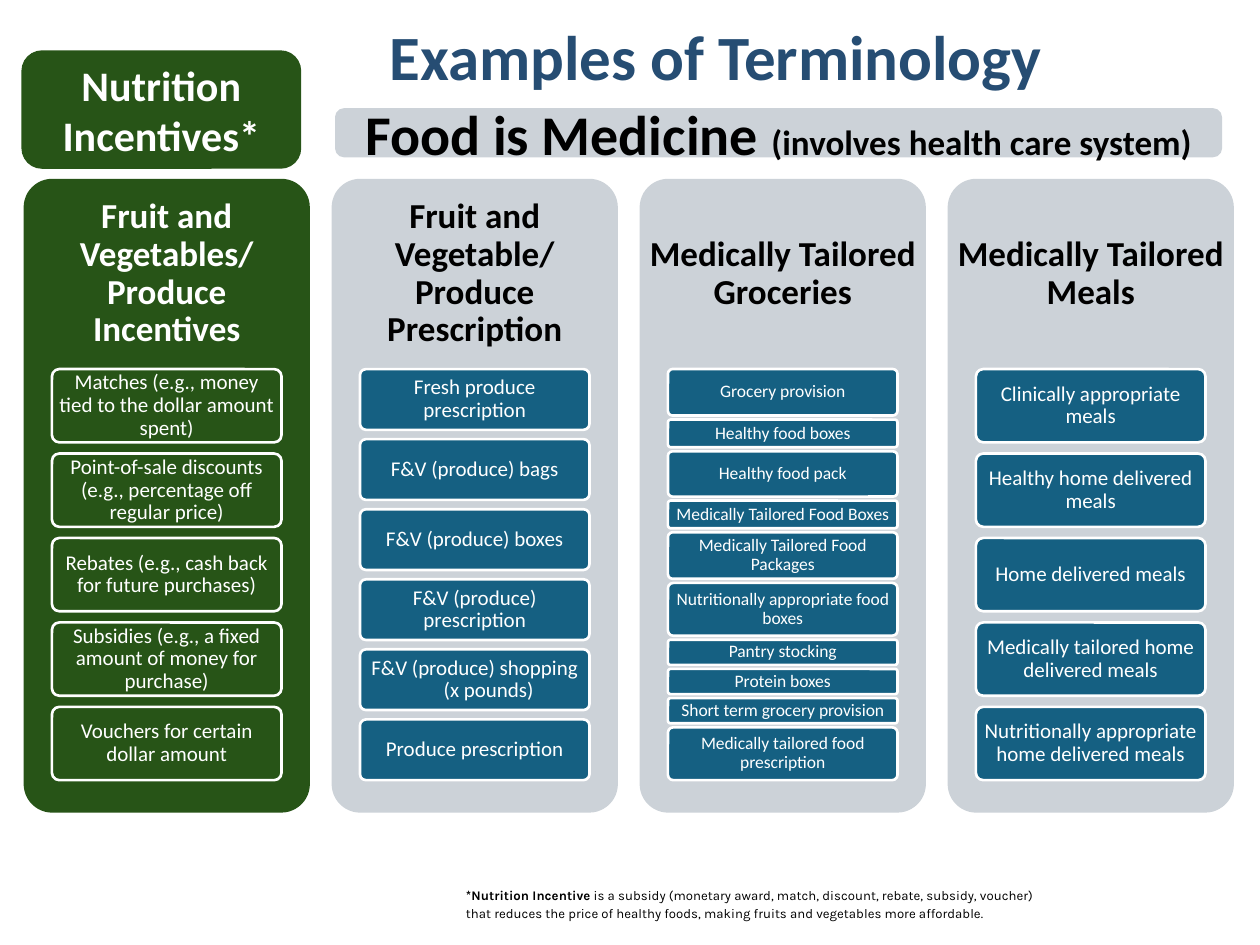
from pptx import Presentation
from pptx.dml.color import RGBColor
from pptx.enum.shapes import MSO_SHAPE as Shape
from pptx.enum.text import MSO_ANCHOR as Anchor, MSO_AUTO_SIZE as Fit, PP_ALIGN as Align
from pptx.util import Pt

NAVY = RGBColor(0x26, 0x4D, 0x73)
GREEN = RGBColor(0x27, 0x54, 0x17)
GRAY = RGBColor(0xCC, 0xD2, 0xD8)
TEAL = RGBColor(0x15, 0x60, 0x82)
WHITE = RGBColor(0xFF, 0xFF, 0xFF)
BLACK = RGBColor(0, 0, 0)

TITLE = "Examples of Terminology"
BADGE = ["Nutrition", "Incentives*"]
BANNER = [("Food is Medicine ", 32), ("(involves health care system)", 20)]
NOTE = [
    ("*Nutrition Incentive", True),
    (" is a subsidy (monetary award, match, discount, rebate, subsidy, voucher) "
     "that reduces the price of healthy foods, making fruits and vegetables "
     "more affordable.", False),
]
COLUMNS = [
    dict(head="Fruit and Vegetables/ Produce Incentives", panel=GREEN, ink=WHITE,
         card=GREEN, size=12, gap=6.4, items=[
             ("Matches (e.g., money tied to the dollar amount spent)", 1),
             ("Point-of-sale discounts (e.g., percentage off regular price)", 1),
             ("Rebates (e.g., cash back for future purchases)", 1),
             ("Subsidies (e.g., a fixed amount of money for purchase)", 1),
             ("Vouchers for certain dollar amount", 1)]),
    dict(head="Fruit and Vegetable/ Produce Prescription", panel=GRAY, ink=BLACK,
         card=TEAL, size=12, gap=5.3, items=[
             ("Fresh produce prescription", 1),
             ("F&V (produce) bags", 1),
             ("F&V (produce) boxes", 1),
             ("F&V (produce) prescription", 1),
             ("F&V (produce) shopping\n(x pounds)", 1),
             ("Produce prescription", 1)]),
    dict(head="Medically Tailored Groceries", panel=GRAY, ink=BLACK,
         card=TEAL, size=10, gap=2.3, items=[
             ("Grocery provision", 37),
             ("Healthy food boxes", 22),
             ("Healthy food pack", 36),
             ("Medically Tailored Food Boxes", 22),
             ("Medically Tailored Food Packages", 37),
             ("Nutritionally appropriate food boxes", 42),
             ("Pantry stocking", 20),
             ("Protein boxes", 20),
             ("Short term grocery provision", 20),
             ("Medically tailored food prescription", 42)]),
    dict(head="Medically Tailored Meals", panel=GRAY, ink=BLACK,
         card=TEAL, size=12, gap=6.4, items=[
             ("Clinically appropriate meals", 1),
             ("Healthy home delivered meals", 1),
             ("Home delivered meals", 1),
             ("Medically tailored home delivered meals", 1),
             ("Nutritionally appropriate home delivered meals", 1)]),
]

LEFT, TOP, WIDE, HIGH, PITCH = 13.5, 102.2, 163.6, 362.2, 176
CARD_TOP, CARD_END, CARD_WIDE = 210.9, 445.8, 131.2
HEAD_HIGH = 108.7


def set_frame(frame, pads):
    frame.word_wrap = True
    frame.auto_size = Fit.NONE
    frame.vertical_anchor = Anchor.MIDDLE
    (frame.margin_left, frame.margin_top,
     frame.margin_right, frame.margin_bottom) = map(Pt, pads)


def add_run(para, text, size, color, bold=False, face="Calibri"):
    run = para.add_run()
    run.text = text
    font = run.font
    font.name, font.size, font.bold = face, Pt(size), bold
    font.color.rgb = color


def add_box(slide, area, fill, line=None, round_by=None, pads=(7.2, 3.6, 7.2, 3.6)):
    box = slide.shapes.add_shape(Shape.ROUNDED_RECTANGLE, *map(Pt, area))
    box.shadow.inherit = False
    box.fill.solid()
    box.fill.fore_color.rgb = fill
    if line is None:
        box.line.fill.background()
    else:
        box.line.color.rgb = line
        box.line.width = Pt(1.5)
    if round_by:
        box.adjustments[0] = round_by
    set_frame(box.text_frame, pads)
    return box.text_frame


def add_lines(frame, lines, size, color, bold=False, space=None):
    for row, text in enumerate(lines):
        para = frame.add_paragraph() if row else frame.paragraphs[0]
        para.alignment = Align.CENTER
        if space:
            para.line_spacing = space
        add_run(para, text, size, color, bold)
    return para


def add_column(slide, left, col):
    frame = add_box(slide, (left, TOP, WIDE, HIGH), col["panel"], round_by=0.1,
                    pads=(0.5, 1, 0.5, HIGH - HEAD_HIGH + 1))
    add_lines(frame, [col["head"]], 20, col["ink"], True, 0.9)
    items, gap = col["items"], col["gap"]
    room = CARD_END - CARD_TOP - gap * (len(items) - 1)
    unit = room / sum(share for _, share in items)
    top = CARD_TOP
    for text, share in items:
        high = unit * share
        area = (left + (WIDE - CARD_WIDE) / 2, top, CARD_WIDE, high)
        frame = add_box(slide, area, col["card"], WHITE, 0.1, (2, 1, 2, 1))
        lines = text.split("\n")
        last = add_lines(frame, lines, col["size"], WHITE, space=0.9)
        if len(lines) > 1:
            last._p.get_or_add_pPr().set("marL", str(Pt(16)))
        top += high + gap


def main():
    deck = Presentation()
    deck.slide_width, deck.slide_height = Pt(720), Pt(540)
    slide = deck.slides.add_slide(deck.slide_layouts[5])

    title = slide.shapes.title
    title.left, title.top, title.width, title.height = map(Pt, (215.3, 13.7, 460.8, 36))
    set_frame(title.text_frame, (7.2, 3.6, 7.2, 3.6))
    para = title.text_frame.paragraphs[0]
    para.alignment = Align.LEFT
    add_run(para, TITLE, 36, NAVY, True)

    for num, col in enumerate(COLUMNS):
        add_column(slide, LEFT + num * PITCH, col)

    note = slide.shapes.add_textbox(*map(Pt, (259.2, 504.7, 350.6, 22.3))).text_frame
    set_frame(note, (7.2, 3.6, 7.2, 3.6))
    para = note.paragraphs[0]
    para.line_spacing = 1.15
    for text, bold in NOTE:
        add_run(para, text, 7.5, BLACK, bold, "Karla")

    badge = add_box(slide, (13, 29.5, 158.4, 66.2), GREEN, GREEN)
    add_lines(badge, BADGE, 24, WHITE, True)

    banner = add_box(slide, (192.2, 62.6, 505.4, 26.6), GRAY, GRAY)
    para = banner.paragraphs[0]
    para.alignment = Align.CENTER
    for text, size in BANNER:
        add_run(para, text, size, BLACK, True)

    deck.save("out.pptx")


if __name__ == "__main__":
    main()
